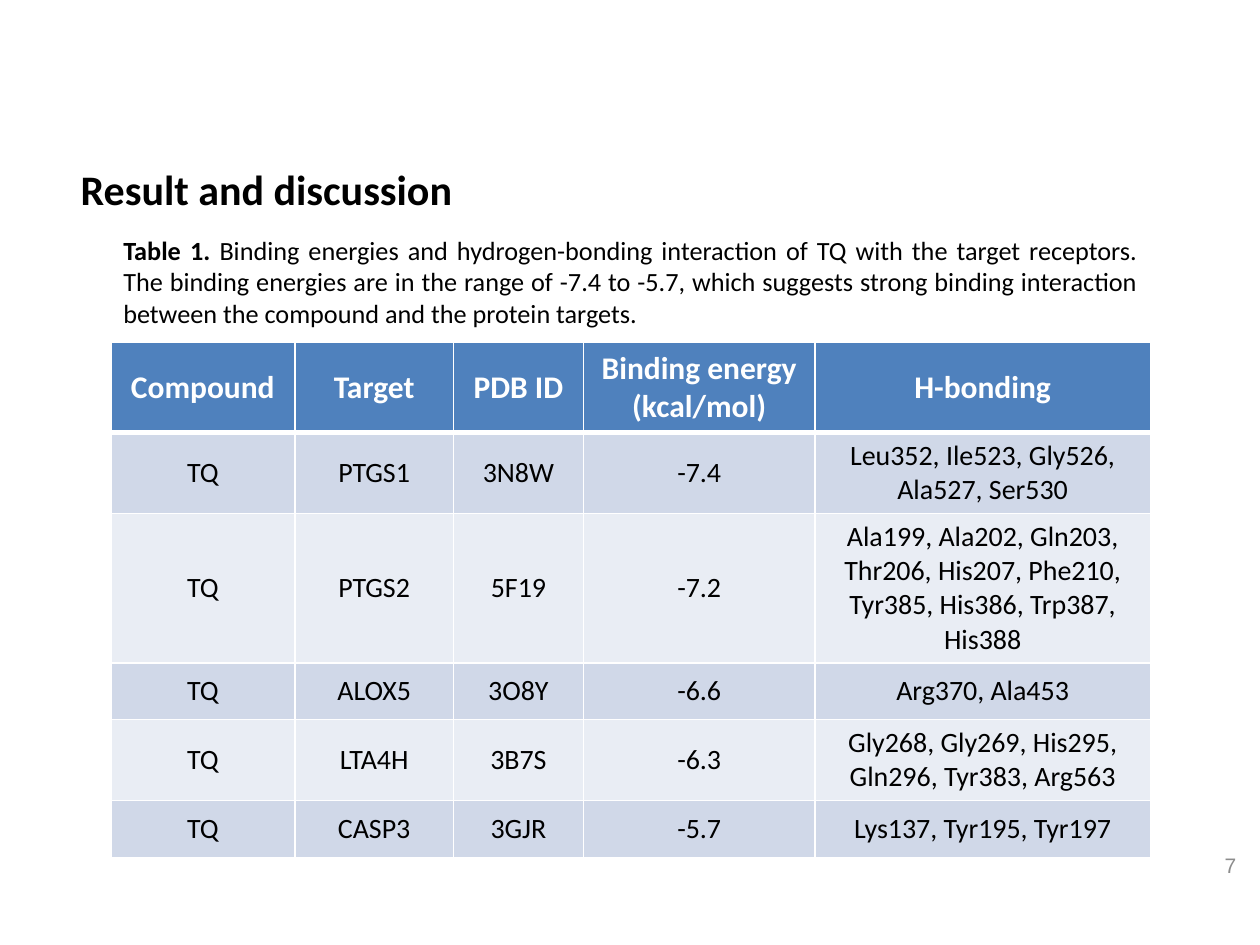
from lxml import etree
from pptx import Presentation
from pptx.dml.color import RGBColor
from pptx.enum.text import MSO_ANCHOR, MSO_AUTO_SIZE, PP_ALIGN
from pptx.oxml.ns import qn
from pptx.util import Inches, Pt

TOP, MIDDLE = MSO_ANCHOR.TOP, MSO_ANCHOR.MIDDLE
LEFT, CENTER, RIGHT, JUSTIFY = PP_ALIGN.LEFT, PP_ALIGN.CENTER, PP_ALIGN.RIGHT, PP_ALIGN.JUSTIFY
NO_FIT = MSO_AUTO_SIZE.NONE
TITLE_ONLY = 5

BLACK, WHITE, GRAY = "000000", "FFFFFF", "8C8C8C"
HEADER_FILL, BANDS = "4F81BD", ("D0D8E8", "E9EDF4")

COLUMN_WIDTHS = (1.46, 1.26, 1.03, 1.84, 2.66)
HEADER_HEIGHT, ROW_HEIGHT = 0.6, 0.45
HEADINGS = ("Compound", "Target", "PDB ID", "Binding energy (kcal/mol)", "H-bonding")
RESULTS = (
    ("TQ", "PTGS1", "3N8W", "-7.4", "Leu352, Ile523, Gly526, Ala527, Ser530"),
    ("TQ", "PTGS2", "5F19", "-7.2",
     "Ala199, Ala202, Gln203, Thr206, His207, Phe210, Tyr385, His386, Trp387, His388"),
    ("TQ", "ALOX5", "3O8Y", "-6.6", "Arg370, Ala453"),
    ("TQ", "LTA4H", "3B7S", "-6.3", "Gly268, Gly269, His295, Gln296, Tyr383, Arg563"),
    ("TQ", "CASP3", "3GJR", "-5.7", "Lys137, Tyr195, Tyr197"),
)


def rgb(color):
    return RGBColor.from_string(color)


def add_text(p, text, size=16, color=BLACK, bold=False, font="Calibri", align=LEFT):
    p.alignment = align
    r = p.add_run()
    r.text = text
    r.font.name, r.font.size, r.font.bold = font, Pt(size), bold
    r.font.color.rgb = rgb(color)


def place(sp, box, anchor=TOP):
    """Move a text shape to its box and return its first paragraph."""
    sp.left, sp.top, sp.width, sp.height = (Inches(v) for v in box)
    tf = sp.text_frame
    tf.word_wrap, tf.auto_size, tf.vertical_anchor = True, NO_FIT, anchor
    return tf.paragraphs[0]


def add_textbox(slide, box, anchor=TOP):
    return place(slide.shapes.add_textbox(0, 0, 0, 0), box, anchor)


def set_borders(cell, top, bottom):
    tc_pr = cell._tc.get_or_add_tcPr()
    for side, width in (("L", 1), ("R", 1), ("T", top), ("B", bottom)):
        ln = etree.SubElement(tc_pr, qn(f"a:ln{side}"), w=str(Pt(width)))
        fill = etree.SubElement(ln, qn("a:solidFill"))
        etree.SubElement(fill, qn("a:srgbClr"), val=WHITE)


def add_title(slide, box):
    add_text(place(slide.shapes.title, box), "Result and discussion", size=24, bold=True)


def add_caption(slide, box):
    p = add_textbox(slide, box)
    add_text(p, "Table 1. ", size=15, bold=True, align=JUSTIFY)
    add_text(p, "Binding energies and hydrogen-bonding interaction of TQ with the target "
             "receptors. The binding energies are in the range of -7.4 to -5.7, which "
             "suggests strong binding interaction between the compound and the protein "
             "targets.", size=15, align=JUSTIFY)


def add_results_table(slide, left, top):
    rows = (HEADINGS, *RESULTS)
    height = HEADER_HEIGHT + ROW_HEIGHT * len(RESULTS)
    table = slide.shapes.add_table(
        len(rows), len(HEADINGS), Inches(left), Inches(top),
        Inches(sum(COLUMN_WIDTHS)), Inches(height)).table
    for column, width in zip(table.columns, COLUMN_WIDTHS):
        column.width = Inches(width)
    for i, values in enumerate(rows):
        header = i == 0
        table.rows[i].height = Inches(HEADER_HEIGHT if header else ROW_HEIGHT)
        for j, value in enumerate(values):
            cell = table.cell(i, j)
            cell.vertical_anchor = MIDDLE
            # A thicker rule separates the header from the results
            set_borders(cell, top=3 if i == 1 else 1, bottom=3 if header else 1)
            cell.fill.solid()
            cell.fill.fore_color.rgb = rgb(HEADER_FILL if header else BANDS[(i - 1) % 2])
            add_text(cell.text_frame.paragraphs[0], value, size=18 if header else 16,
                     color=WHITE if header else BLACK, bold=header, align=CENTER)


def add_page_number(slide, box):
    add_text(add_textbox(slide, box, MIDDLE), "7", size=12, color=GRAY,
             font="Arial", align=RIGHT)


def main():
    prs = Presentation()
    prs.slide_width, prs.slide_height = Inches(10), Inches(7.5)
    slide = prs.slides.add_slide(prs.slide_layouts[TITLE_ONLY])
    add_title(slide, (0.54, 1.25, 8.92, 0.5))
    add_results_table(slide, 0.88, 2.72)
    add_caption(slide, (0.88, 1.81, 8.25, 0.86))
    add_page_number(slide, (7.58, 6.67, 2.33, 0.4))
    prs.save("out.pptx")


if __name__ == "__main__":
    main()
